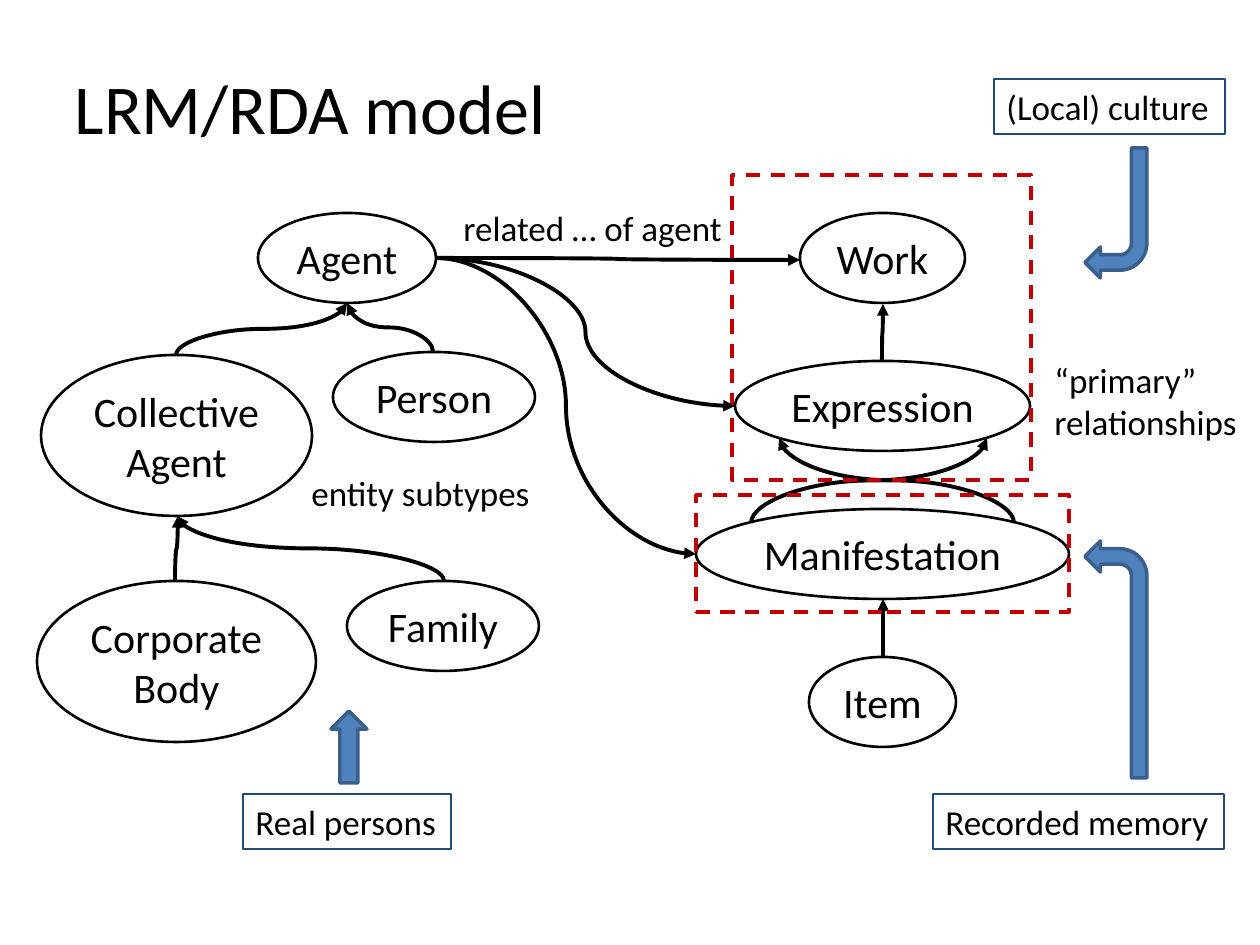
from lxml.etree import SubElement
from pptx import Presentation
from pptx.dml.color import RGBColor
from pptx.enum.dml import MSO_LINE
from pptx.enum.shapes import MSO_CONNECTOR, MSO_SHAPE
from pptx.enum.text import MSO_ANCHOR, MSO_AUTO_SIZE, PP_ALIGN
from pptx.oxml.ns import qn
from pptx.util import Pt

SCALE = 914400 / 126
BLACK = RGBColor(0x00, 0x00, 0x00)
NAVY = RGBColor(0x1F, 0x49, 0x7D)
RED = RGBColor(0xC0, 0x00, 0x00)
BLUE = RGBColor(0x4F, 0x81, 0xBD)
STEEL = RGBColor(0x3A, 0x5F, 0x8C)


def px(*vals):
    return [round(v * SCALE) for v in vals]


def assign(obj, form):
    for key, val in form.items():
        setattr(obj, key, val)


def write(shape, text, size, align=PP_ALIGN.LEFT, anchor=MSO_ANCHOR.MIDDLE, wrap=False):
    frame = shape.text_frame
    frame.text = text
    assign(frame, {"word_wrap": wrap, "auto_size": MSO_AUTO_SIZE.NONE,
                   "vertical_anchor": anchor})
    for para in frame.paragraphs:
        para.alignment = align
        assign(para.font, {"name": "Calibri", "size": Pt(size)})
        para.font.color.rgb = BLACK


def draw(slide, kind, box, rel, color, width, fill=None):
    """Add a preset shape at rel inside box."""
    x, y, w, h = rel
    shape = slide.shapes.add_shape(kind, *px(box[0] + x, box[1] + y, w, h))
    shape.shadow.inherit = False
    if fill is None:
        shape.fill.background()
    else:
        shape.fill.solid()
        shape.fill.fore_color.rgb = fill
    shape.line.color.rgb = color
    shape.line.width = Pt(width)
    return shape


def oval(slide, box, rel, text):
    shape = draw(slide, MSO_SHAPE.OVAL, box, rel, BLACK, 1.5)
    write(shape, text, 24, PP_ALIGN.CENTER)


def label(slide, box, rel, text):
    x, y, w, h = rel
    note = slide.shapes.add_textbox(*px(box[0] + x, box[1] + y, w, h))
    write(note, text, 20, anchor=MSO_ANCHOR.TOP)


def curve(slide, box, start, end, rise=False):
    """Add a curved arrow; a rising one leaves and arrives vertically."""
    x1, y1, x2, y2 = *start, *end
    turn = 0
    if rise:
        midx, midy = (x1 + x2) / 2, (y1 + y2) / 2
        side = 1 if x2 >= x1 else -1
        long, wide = side * (y1 - y2) / 2, abs(x2 - x1) / 2
        x1, y1, x2, y2 = midx + long, midy + wide, midx - long, midy - wide
        turn = 90 if side > 0 else 270
    left, top = box[:2]
    link = slide.shapes.add_connector(
        MSO_CONNECTOR.CURVE, *px(left + x1, top + y1, left + x2, top + y2))
    link.line.color.rgb = BLACK
    link.line.width = Pt(2.25)
    props = link.element.spPr
    if turn:
        props.find(qn("a:xfrm")).set("rot", str(turn * 60000))
    SubElement(props.find(qn("a:ln")), qn("a:tailEnd"), type="triangle")
    SubElement(props, qn("a:effectLst"))


def head(slide, box):
    title = slide.shapes.title
    assign(title, dict(zip(("left", "top", "width", "height"), px(*box))))
    write(title, "LRM/RDA model", 40, wrap=True)


def agents(slide, box):
    # Entities
    for rel, text in (
        ((221, 0, 178, 90), "Agent"),
        ((4, 142, 271, 161), "Collective\nAgent"),
        ((296, 139, 202, 90), "Person"),
        ((0, 368, 279, 161), "Corporate\nBody"),
        ((310, 368, 192, 90), "Family"),
    ):
        oval(slide, box, rel, text)
    # Subtype arrows
    for start, end in (
        ((138, 369), (141, 303)), ((407, 368), (140, 303)),
        ((139, 142), (310, 90)), ((396, 139), (310, 90)),
    ):
        curve(slide, box, start, end, rise=True)
    label(slide, box, (262, 252, 246, 55), "entity subtypes")


def works(slide, box):
    # Entities, centred on one column at an even pitch
    mid, pitch, tall = box[2] / 2, 148, 90
    names = (("Work", 165), ("Expression", 295), ("Manifestation", 373), ("Item", 147))
    for row, (text, wide) in enumerate(names):
        oval(slide, box, (mid - wide / 2, 38 + row * pitch, wide, tall), text)
    # Primary relationships
    for start, end in (
        ((187, 483), (187, 424)), ((186, 187), (187, 129)),
        ((318, 348), (83, 263)), ((55, 348), (291, 263)),
    ):
        curve(slide, box, start, end, rise=True)
    label(slide, box, (346, 177, 210, 97), "“primary”\nrelationships")
    # Dashed groups
    for rel in ((36, 0, 299, 305), (0, 320, 373, 117)):
        frame = draw(slide, MSO_SHAPE.RECTANGLE, box, rel, RED, 2)
        frame.line.dash_style = MSO_LINE.DASH


def links(slide, box):
    for end in ((364, 47), (299, 193), (260, 341)):
        curve(slide, box, (0, 45), end)
    label(slide, box, (15, -13, 289, 55), "related … of agent")


def context(slide, box):
    # Callouts
    for rel, text in (
        ((690, 715, 291, 55), "Recorded memory"),
        ((751, 0, 231, 55), "(Local) culture"),
        ((0, 715, 208, 55), "Real persons"),
    ):
        write(draw(slide, MSO_SHAPE.RECTANGLE, box, rel, NAVY, 1), text, 20)
    # Block arrows
    for kind, rel, flips in (
        (MSO_SHAPE.BENT_ARROW, (842, 462, 62, 237), ("flipH",)),
        (MSO_SHAPE.BENT_ARROW, (842, 69, 62, 130), ("flipH", "flipV")),
        (MSO_SHAPE.UP_ARROW, (88, 632, 36, 72), ()),
    ):
        arrow = draw(slide, kind, box, rel, STEEL, 2, BLUE)
        for flip in flips:
            arrow.element.spPr.find(qn("a:xfrm")).set(flip, "1")


def main():
    deck = Presentation()
    deck.slide_width, deck.slide_height = px(1260, 945)
    slide = deck.slides.add_slide(deck.slide_layouts[5])
    head(slide, (62, 58, 501, 97))
    agents(slide, (37, 213, 502, 529))
    works(slide, (696, 175, 373, 573))
    links(slide, (436, 213, 364, 341))
    context(slide, (243, 79, 982, 770))
    deck.save("out.pptx")


if __name__ == "__main__":
    main()
